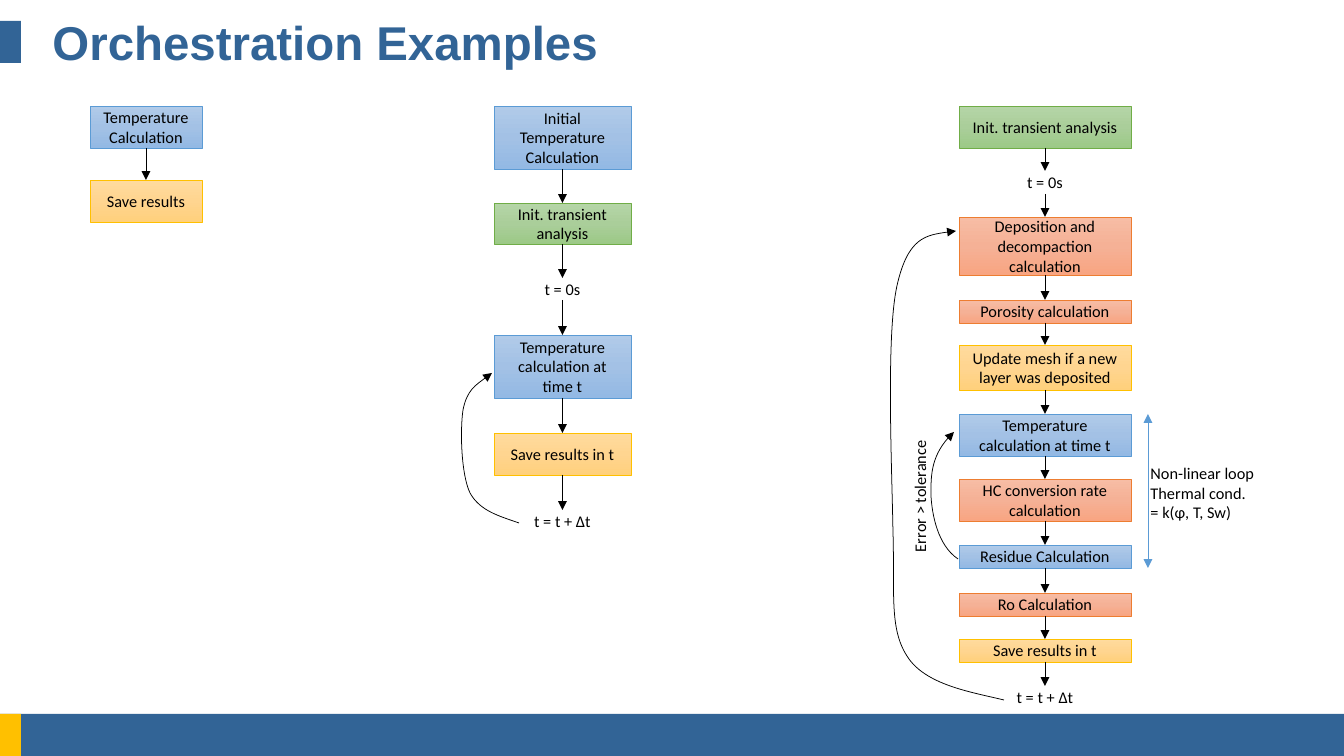
"""Build the slide of three orchestration flow charts."""
from copy import deepcopy
from itertools import pairwise

from pptx import Presentation
from pptx.dml.color import RGBColor
from pptx.enum.shapes import MSO_CONNECTOR, MSO_SHAPE
from pptx.enum.text import MSO_ANCHOR, MSO_AUTO_SIZE, PP_ALIGN
from pptx.oxml.ns import qn
from pptx.util import Pt
from lxml.etree import SubElement

PX = 8572.5
NAVY, GOLD, BLACK, SKY = "326496", "FFC000", "000000", "5B9BD5"
BARS = [(0, 714, 1344, 42, NAVY), (0, 714, 21, 42, GOLD), (0, 21, 21, 42, NAVY)]
KINDS = {
    "blue": (("B1CBE9", "A3C1E5", "93B9E4"), SKY),
    "gold": (("FFDB9E", "FFD590", "FFD07C"), GOLD),
    "green": (("B5D5A7", "AACE9A", "9CC987"), "70AD47"),
    "coral": (("F7BDA5", "F5B196", "F8A582"), "ED7D31"),
}
FLOWS = [
    (90, 112, [
        ("blue", 106, 42, "Temperature Calculation"),
        ("gold", 180, 42, "Save results"),
    ]),
    (494, 137, [
        ("blue", 106, 63, "Initial Temperature Calculation"),
        ("green", 203, 41, "Init. transient analysis"),
        (None, 278, 22, "t = 0s"),
        ("blue", 335, 63, "Temperature calculation at time t"),
        ("gold", 433, 42, "Save results in t"),
        (None, 510, 22, "t = t + Δt"),
    ]),
    (959, 172, [
        ("green", 106, 42, "Init. transient analysis"),
        (None, 171, 23, "t = 0s"),
        ("coral", 217, 58, "Deposition and decompaction calculation"),
        ("coral", 300, 23, "Porosity calculation"),
        ("gold", 345, 45, "Update mesh if a new layer was deposited"),
        ("blue", 414, 42, "Temperature calculation at time t"),
        ("coral", 479, 42, "HC conversion rate calculation"),
        ("blue", 545, 23, "Residue Calculation"),
        ("coral", 593, 23, "Ro Calculation"),
        ("gold", 639, 23, "Save results in t"),
        (None, 686, 23, "t = t + Δt"),
    ]),
]
LOOPS = [
    [(519, 523), (499, 516), (480, 511), (470, 493), (461, 474), (460, 430),
     (463, 410), (467, 390), (480, 382), (492, 373)],
    [(958, 559), (937, 545), (932, 513), (931, 496), (931, 478), (930, 454),
     (954, 432)],
    [(1004, 700), (971, 692), (925, 685), (907, 656), (889, 628), (895, 592),
     (893, 530), (892, 468), (886, 336), (897, 286), (908, 237), (931, 234),
     (956, 231)],
]
SPAN = (1148, 414, 1148, 568)
NOTES = [
    ((853, 480, 134, 31), 270, ["Error > tolerance"]),
    ((1140, 458, 126, 70), 0, ["Non-linear loop", "Thermal cond.", "= k(φ, T, Sw)"]),
]


def emu(*nums):
    return [round(n * PX) for n in nums]


def tint(code):
    return RGBColor.from_string(code)


def write(shape, lines, align=PP_ALIGN.LEFT, size=11, font="Calibri", color=BLACK, bold=False):
    frame = shape.text_frame
    for i, line in enumerate(lines):
        para = frame.add_paragraph() if i else frame.paragraphs[0]
        para.alignment = align
        run = para.add_run()
        run.text = line
        run.font.size, run.font.name, run.font.bold = Pt(size), font, bold
        run.font.color.rgb = tint(color)


def center(shape):
    frame = shape.text_frame
    frame.word_wrap = True
    frame.vertical_anchor = MSO_ANCHOR.MIDDLE
    frame.margin_top = frame.margin_bottom = 0


def rect(slide, *area):
    shape = slide.shapes.add_shape(MSO_SHAPE.RECTANGLE, *emu(*area))
    shape.shadow.inherit = False
    return shape


def step(slide, kind, area, text):
    if kind:
        shape = rect(slide, *area)
        stops, edge = KINDS[kind]
        fill = shape.fill
        fill.gradient()
        fill.gradient_angle = 270
        ramp = next(shape._element.iter(qn("a:gsLst")))
        ramp.insert(1, deepcopy(ramp[0]))
        for stop, place, code in zip(fill.gradient_stops, (0, 0.5, 1), stops):
            stop.position = place
            stop.color.rgb = tint(code)
        shape.line.color.rgb = tint(edge)
        shape.line.width = Pt(0.5)
    else:
        shape = slide.shapes.add_textbox(*emu(*area))
    center(shape)
    write(shape, [text], PP_ALIGN.CENTER)
    return shape


def stroke(shape, color, ends=("tailEnd",)):
    shape.line.color.rgb = tint(color)
    shape.line.width = Pt(0.5)
    for end in ends:
        SubElement(shape.line._get_or_add_ln(), qn(f"a:{end}"), type="triangle")


def link(slide, area=(0, 0, 0, 0)):
    line = slide.shapes.add_connector(MSO_CONNECTOR.STRAIGHT, *emu(*area))
    SubElement(line._element.spPr, qn("a:effectLst"))
    return line


def loop(slide, dots):
    first, *rest = [emu(*dot) for dot in dots]
    pen = slide.shapes.build_freeform(*first)
    pen.add_line_segments(rest, close=False)
    shape = pen.convert_to_shape()
    shape.shadow.inherit = False
    shape.fill.background()
    lines = list(shape._element.iter(qn("a:lnTo")))
    for i in range(0, len(lines), 3):
        curve = SubElement(lines[i].getparent(), qn("a:cubicBezTo"))
        for line in lines[i:i + 3]:
            curve.append(line[0])
            line.getparent().remove(line)
    stroke(shape, BLACK)


def main():
    deck = Presentation()
    deck.slide_width, deck.slide_height = emu(1344, 756)
    slide = deck.slides.add_slide(deck.slide_layouts[6])
    for *area, color in BARS:
        bar = rect(slide, *area)
        bar.fill.solid()
        bar.fill.fore_color.rgb = tint(color)
        bar.line.fill.background()
    title = slide.shapes.add_textbox(*emu(42, 21, 1260, 42))
    center(title)
    write(title, ["Orchestration Examples"], size=32, font="Arial", color=NAVY, bold=True)
    for left, width, steps in FLOWS:
        boxes = [step(slide, kind, (left, top, width, high), text)
                 for kind, top, high, text in steps]
        for above, below in pairwise(boxes):
            line = link(slide)
            line.begin_connect(above, 2)
            line.end_connect(below, 0)
            stroke(line, BLACK)
    for dots in LOOPS:
        loop(slide, dots)
    stroke(link(slide, SPAN), SKY, ("headEnd", "tailEnd"))
    for area, turn, lines in NOTES:
        note = slide.shapes.add_textbox(*emu(*area))
        note.rotation = turn
        note.text_frame.word_wrap = False
        note.text_frame.auto_size = MSO_AUTO_SIZE.SHAPE_TO_FIT_TEXT
        write(note, lines)
    deck.save("out.pptx")


if __name__ == "__main__":
    main()
